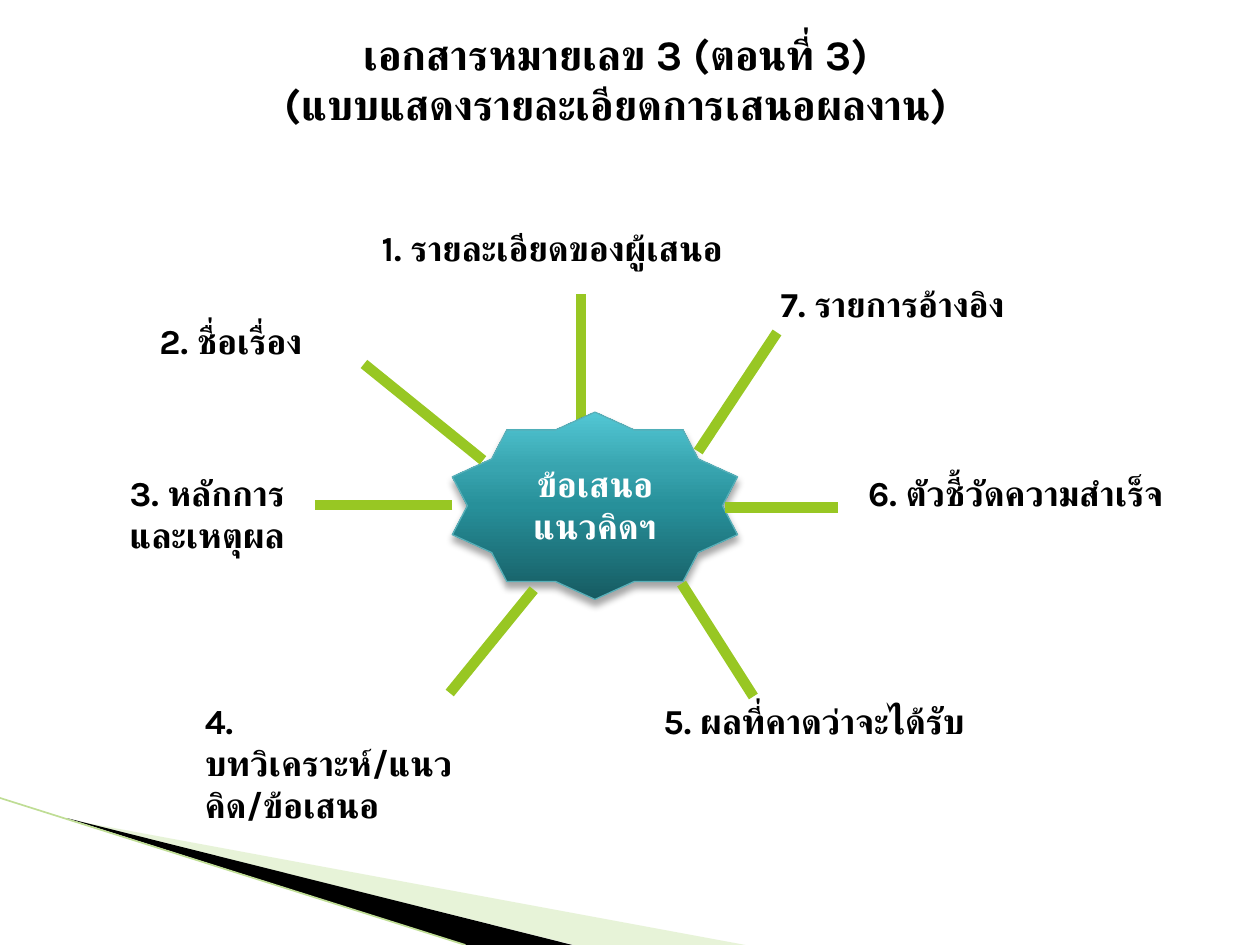
from lxml import etree
from pptx import Presentation
from pptx.dml.color import RGBColor
from pptx.enum.shapes import MSO_CONNECTOR as Connector, MSO_SHAPE as Shape
from pptx.enum.text import MSO_ANCHOR as Anchor, MSO_AUTO_SIZE as AutoSize, PP_ALIGN as Align
from pptx.oxml import parse_xml
from pptx.oxml.ns import nsdecls, qn
from pptx.util import Pt

FONT = "Karla"
COLORS = {
    "text": "000000", "light": "FFFFFF", "spoke": "98C723", "star_edge": "59B0B9",
    "pale": "C5E19F", "black": "000000", "edge": "BFDD95", "shadow": "000000",
}
STAR_STOPS = [(0, "165B62"), (50, "27909A"), (70, "38A4AF"), (100, "52C7D4")]

# Text, then left, top, width, height inside the diagram
LABELS = [
    ("2. ชื่อเรื่อง", 17, 53, 207, 32, Align.LEFT),
    ("1. รายละเอียดของผู้เสนอ", 116, 0, 265, 32, Align.CENTER),
    ("3. หลักการ\nและเหตุผล", 0, 140, 168, 55, Align.LEFT),
    ("4. บทวิเคราะห์/แนวคิด/ข้อเสนอ", 43, 270, 165.6, 55, Align.LEFT),
    ("5. ผลที่คาดว่าจะได้รับ", 305, 270, 239, 32, Align.LEFT),
    ("6. ตัวชี้วัดความสำเร็จ", 422, 140, 187, 55, Align.LEFT),
    ("7. รายการอ้างอิง", 372, 32, 187, 32, Align.LEFT),
]
# From the star outwards: x1, y1, x2, y2
TOP_SPOKE = (265, 122.5, 265, 42)
SPOKES = [
    (209, 137, 141, 82), (191.5, 162.5, 113, 162.5), (238, 211, 190, 270),
    (347, 164, 412, 164), (322.5, 207.5, 363.5, 272), (332, 132, 377, 64),
]


def rgb(name):
    return RGBColor.from_string(COLORS[name])


def write(frame, lines, size, color, align):
    frame.word_wrap = True
    for index, line in enumerate(lines):
        para = frame.paragraphs[0] if index == 0 else frame.add_paragraph()
        para.text = line
        para.alignment = align
        for span in para.runs:
            for name, value in {"name": FONT, "size": Pt(size), "bold": True}.items():
                setattr(span.font, name, value)
            span.font.color.rgb = rgb(color)
            # Thai is set in the complex-script font
            etree.SubElement(span.font._element, qn("a:cs"), typeface=FONT)


def add_text(shapes, lines, left, top, width, height, color, align):
    box = shapes.add_textbox(Pt(left), Pt(top), Pt(width), Pt(height))
    write(box.text_frame, lines, 20, color, align)
    box.text_frame.auto_size = AutoSize.SHAPE_TO_FIT_TEXT


def add_line(shapes, left, top, ends, color, width):
    x1, y1, x2, y2 = ends
    line = shapes.add_connector(Connector.STRAIGHT, Pt(left + x1), Pt(top + y1),
                                Pt(left + x2), Pt(top + y2))
    line.line.color.rgb = rgb(color)
    line.line.width = Pt(width)
    etree.SubElement(line._element.spPr, qn("a:effectLst"))


def add_wedge(shapes, left, top, points, color, alpha=None):
    corners = [(Pt(left + x), Pt(top + y)) for x, y in points]
    builder = shapes.build_freeform(*corners[0], scale=1.0)
    builder.add_line_segments(corners[1:], close=True)
    wedge = builder.convert_to_shape()
    wedge.shadow.inherit = False
    wedge.fill.solid()
    wedge.fill.fore_color.rgb = rgb(color)
    wedge.line.fill.background()
    if alpha:
        tint = wedge._element.spPr.find(qn("a:solidFill"))[0]
        etree.SubElement(tint, qn("a:alpha"), val=str(alpha * 1000))


def draw_corner(shapes, left, top):
    add_wedge(shapes, left, top, [(40, 12.5), (426, 84), (328, 84)], "pale", 40)
    add_wedge(shapes, left, top, [(38, 11.5), (327, 84), (266, 84)], "black")
    add_line(shapes, left, top, (0, 0, 266, 84), "edge", 0.95)


def draw_title(page, left, top, width, height):
    title = page.shapes.title
    for name, value in {"left": left, "top": top, "width": width, "height": height}.items():
        setattr(title, name, Pt(value))
    title.text_frame.vertical_anchor = Anchor.MIDDLE
    write(title.text_frame, ["เอกสารหมายเลข 3 (ตอนที่ 3)\n(แบบแสดงรายละเอียดการเสนอผลงาน)"],
          24, "text", Align.CENTER)


def draw_star(shapes, left, top, width, height):
    star = shapes.add_shape(Shape.STAR_10_POINT, Pt(left), Pt(top), Pt(width), Pt(height))
    star.line.color.rgb = rgb("star_edge")
    star.line.width = Pt(0.75)

    # Four-stop gradient, dark at the bottom
    star.fill.gradient()
    star.fill.gradient_angle = 90
    stops = star._element.spPr.find(qn("a:gradFill")).find(qn("a:gsLst"))
    for stop in list(stops):
        stops.remove(stop)
    for position, color in STAR_STOPS:
        stop = etree.SubElement(stops, qn("a:gs"), pos=str(position * 1000))
        etree.SubElement(stop, qn("a:srgbClr"), val=color)

    # Soft shadow below
    star._element.spPr.append(parse_xml(
        f'<a:effectLst {nsdecls("a")}><a:outerShdw blurRad="{Pt(4)}" dist="{Pt(3)}" '
        f'dir="5400000" rotWithShape="0"><a:srgbClr val="{COLORS["shadow"]}">'
        '<a:alpha val="35000"/></a:srgbClr></a:outerShdw></a:effectLst>'))
    add_text(shapes, ["ข้อเสนอ", "แนวคิดฯ"], left - 4, top + 25.5, width + 8, 55,
             "light", Align.CENTER)


def draw_diagram(page, left, top):
    shapes = page.shapes.add_group_shape().shapes
    add_line(shapes, left, top, TOP_SPOKE, "spoke", 6)
    draw_star(shapes, left + 191.5, top + 109.5, 163, 107)
    for text, x, y, width, height, align in LABELS:
        add_text(shapes, [text], left + x, top + y, width, height, "text", align)
    for ends in SPOKES:
        add_line(shapes, left, top, ends, "spoke", 6)


def main():
    deck = Presentation()
    deck.slide_width, deck.slide_height = Pt(720), Pt(540)
    page = deck.slides.add_slide(deck.slide_layouts[5])
    draw_corner(page.shapes, 0, 456)
    draw_title(page, 28, 0, 648, 90)
    draw_diagram(page, 67, 126)
    deck.save("out.pptx")


if __name__ == "__main__":
    main()
